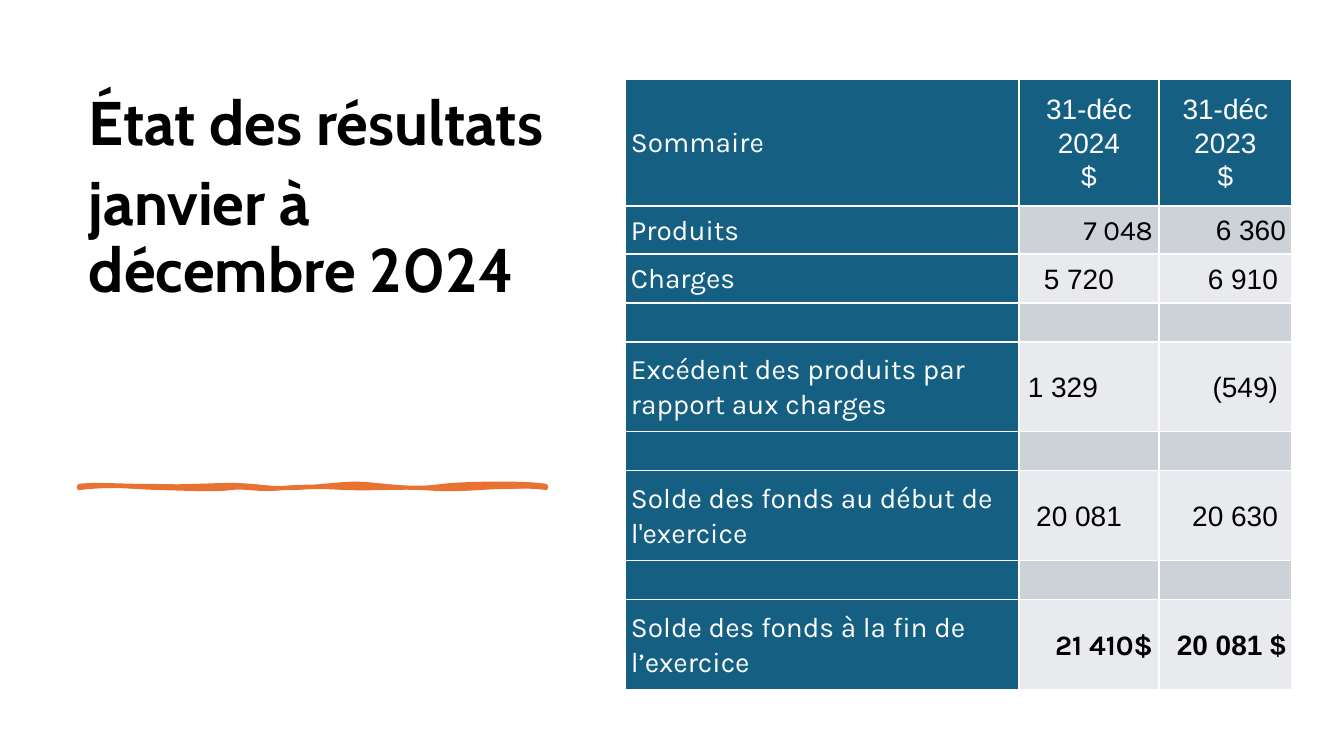
import pptx
import pptx.util
import pptx.oxml
import pptx.oxml.ns
from pptx.dml.color import RGBColor
from pptx.enum.text import MSO_ANCHOR, PP_ALIGN

EMU_PER_PX = 914400 / 100.8

BLACK = RGBColor(0x00, 0x00, 0x00)
WHITE = RGBColor(0xFF, 0xFF, 0xFF)
BLUE = RGBColor(0x15, 0x60, 0x82)
DARK_BAND = RGBColor(0xCC, 0xD2, 0xD8)
LIGHT_BAND = RGBColor(0xE8, 0xEA, 0xED)
ORANGE = RGBColor(0xE9, 0x71, 0x32)

COLUMN_WIDTHS = (394, 140, 133)
ROW_HEIGHTS = (127, 48, 49, 39, 90, 39, 90, 39, 90)
CELL_MARGIN = 6

# Label, then for each year: amount, font, right margin
STATEMENT = (
    ("Produits", ("7 048", "Karla", 6), ("6 360", "Arial", 6)),
    ("Charges", ("5 720", "Arial", 45), ("6 910", "Arial", 14)),
    None,
    ("Excédent des produits par rapport aux charges",
     ("1 329", "Arial", 61), ("(549)", "Arial", 14)),
    None,
    ("Solde des fonds au début de l'exercice",
     ("20 081", "Arial", 37), ("20 630", "Arial", 14)),
    None,
    ("Solde des fonds à la fin de l’exercice",
     ("21 410$", "Karla", 6), ("20 081 $", "Arial", 6)),
)

# Bézier segments: two controls and an end, all starting from the top left corner
STROKE_LEFT, STROKE_TOP, STROKE_RIGHT, STROKE_BOTTOM = 79, 486, 546, 488
STROKE_EDGE = (
    ((96, 484), (121, 486), (141, 486)), ((161, 486), (178, 487), (194, 486)),
    ((209, 486), (229, 484), (251, 486)), ((274, 489), (289, 489), (323, 486)),
    ((356, 483), (356, 483), (385, 486)), ((413, 489), (429, 488), (443, 486)),
    ((456, 484), (521, 482), (546, 486)), ((546, 487), (546, 487), (546, 488)),
    ((532, 486), (512, 486), (480, 488)), ((448, 490), (437, 489), (422, 488)),
    ((407, 487), (368, 489), (346, 488)), ((325, 487), (309, 486), (284, 488)),
    ((259, 491), (244, 486), (231, 488)), ((218, 490), (194, 489), (159, 488)),
    ((125, 487), (116, 484), (79, 488)), ((79, 488), (79, 487), (79, 486)),
)
STROKE_BODY = (
    ((93, 488), (113, 486), (141, 486)), ((168, 486), (171, 487), (194, 486)),
    ((217, 485), (254, 483), (270, 486)), ((286, 489), (305, 487), (332, 486)),
    ((359, 486), (376, 484), (394, 486)), ((412, 489), (453, 489), (471, 486)),
    ((488, 483), (514, 483), (546, 486)), ((546, 487), (546, 488), (546, 488)),
    ((534, 486), (512, 491), (489, 488)), ((466, 486), (439, 491), (422, 488)),
    ((405, 485), (381, 489), (356, 488)), ((330, 488), (306, 491), (293, 488)),
    ((280, 485), (234, 488), (217, 488)), ((201, 489), (171, 490), (141, 488)),
    ((111, 487), (94, 487), (79, 488)), ((79, 488), (79, 487), (79, 486)),
)


def px(length):
    return pptx.util.Emu(round(length * EMU_PER_PX))


def add_run(paragraph, text, font_name, size, color, bold=False):
    run = paragraph.add_run()
    run.text = text
    run.font.name = font_name
    run.font.size = pptx.util.Pt(size)
    run.font.color.rgb = color
    run.font.bold = bold


def add_title(slide, lines):
    title = slide.shapes.add_textbox(px(79), px(87), px(503), px(173)).text_frame
    title.word_wrap = True
    for index, line in enumerate(lines):
        paragraph = title.add_paragraph() if index else title.paragraphs[0]
        paragraph.line_spacing = 0.9
        paragraph.space_before = pptx.util.Pt(10)
        add_run(paragraph, line, "Cabin", 44, BLACK, bold=True)


def curve_path(segments, attribute):
    """Return a closed path of Bézier segments, placed relative to the stroke's corner."""
    curves = "".join(
        "<a:cubicBezTo>" + "".join(
            f'<a:pt x="{px(x - STROKE_LEFT)}" y="{px(y - STROKE_TOP)}"/>' for x, y in segment)
        + "</a:cubicBezTo>" for segment in segments)
    width, height = px(STROKE_RIGHT - STROKE_LEFT), px(STROKE_BOTTOM - STROKE_TOP)
    return pptx.oxml.parse_xml(
        f'<a:path {pptx.oxml.ns.nsdecls("a")} w="{width}" h="{height}" {attribute}>'
        f'<a:moveTo><a:pt x="0" y="0"/></a:moveTo>{curves}<a:close/></a:path>')


def add_brush_stroke(slide):
    builder = slide.shapes.build_freeform(px(STROKE_LEFT), px(STROKE_TOP))
    builder.add_line_segments([(px(STROKE_RIGHT), px(STROKE_BOTTOM))])
    stroke = builder.convert_to_shape()
    straight = stroke.element.find(".//" + pptx.oxml.ns.qn("a:path"))
    straight.addprevious(curve_path(STROKE_EDGE, 'fill="none"'))
    straight.addprevious(curve_path(STROKE_BODY, 'stroke="0"'))
    straight.getparent().remove(straight)
    stroke.shadow.inherit = False
    stroke.fill.solid()
    stroke.fill.fore_color.rgb = ORANGE
    stroke.line.color.rgb = ORANGE
    stroke.line.width = pptx.util.Pt(3)
    line = stroke.element.find(".//" + pptx.oxml.ns.qn("a:ln"))
    line.append(pptx.oxml.parse_xml(f'<a:round {pptx.oxml.ns.nsdecls("a")}/>'))


def style_cell(cell, color, right_margin=CELL_MARGIN):
    """Set margins, white borders and fill."""
    cell.vertical_anchor = MSO_ANCHOR.MIDDLE
    cell.margin_left, cell.margin_right = px(CELL_MARGIN), px(right_margin)
    cell.margin_top = cell.margin_bottom = 0
    properties = cell._tc.get_or_add_tcPr()
    for side in "LRTB":
        properties.append(pptx.oxml.parse_xml(
            f'<a:ln{side} {pptx.oxml.ns.nsdecls("a")} w="12700"><a:solidFill>'
            f'<a:srgbClr val="{WHITE}"/></a:solidFill></a:ln{side}>'))
    cell.fill.solid()
    cell.fill.fore_color.rgb = color


def write_cell(cell, lines, font_name, color, alignment, space_after=8, bold=False):
    for index, line in enumerate(lines):
        frame = cell.text_frame
        paragraph = frame.add_paragraph() if index else frame.paragraphs[0]
        paragraph.alignment = alignment
        paragraph.line_spacing = 1.07
        paragraph.space_after = pptx.util.Pt(space_after)
        add_run(paragraph, line, font_name, 20, color, bold)


def add_statement_table(slide):
    table = slide.shapes.add_table(
        len(ROW_HEIGHTS), len(COLUMN_WIDTHS), px(625), px(79),
        px(sum(COLUMN_WIDTHS)), px(sum(ROW_HEIGHTS))).table
    for column, width in zip(table.columns, COLUMN_WIDTHS):
        column.width = px(width)
    for row, height in zip(table.rows, ROW_HEIGHTS):
        row.height = px(height)

    for column in range(len(COLUMN_WIDTHS)):
        style_cell(table.cell(0, column), BLUE)
    write_cell(table.cell(0, 0), ["Sommaire"], "Karla", WHITE, PP_ALIGN.LEFT)
    for column, year in enumerate(("2024", "2023"), start=1):
        write_cell(table.cell(0, column), ["31-déc", year, "$"], "Arial", WHITE,
                   PP_ALIGN.CENTER, space_after=0)

    for row, entry in enumerate(STATEMENT, start=1):
        band = DARK_BAND if row % 2 else LIGHT_BAND
        label, *amounts = entry or (None, None, None)
        style_cell(table.cell(row, 0), BLUE)
        if label:
            write_cell(table.cell(row, 0), [label], "Karla", WHITE, PP_ALIGN.LEFT)
        for column, amount in enumerate(amounts, start=1):
            cell = table.cell(row, column)
            if amount is None:
                style_cell(cell, band)
                continue
            text, font_name, right_margin = amount
            style_cell(cell, band, right_margin)
            write_cell(cell, [text], font_name, BLACK, PP_ALIGN.RIGHT,
                       bold=row == len(STATEMENT))


def main():
    presentation = pptx.Presentation()
    presentation.slide_width, presentation.slide_height = px(1344), px(756)
    slide = presentation.slides.add_slide(presentation.slide_layouts[6])
    add_title(slide, ["État des résultats", "janvier à décembre 2024"])
    add_brush_stroke(slide)
    add_statement_table(slide)
    presentation.save("out.pptx")


if __name__ == "__main__":
    main()
